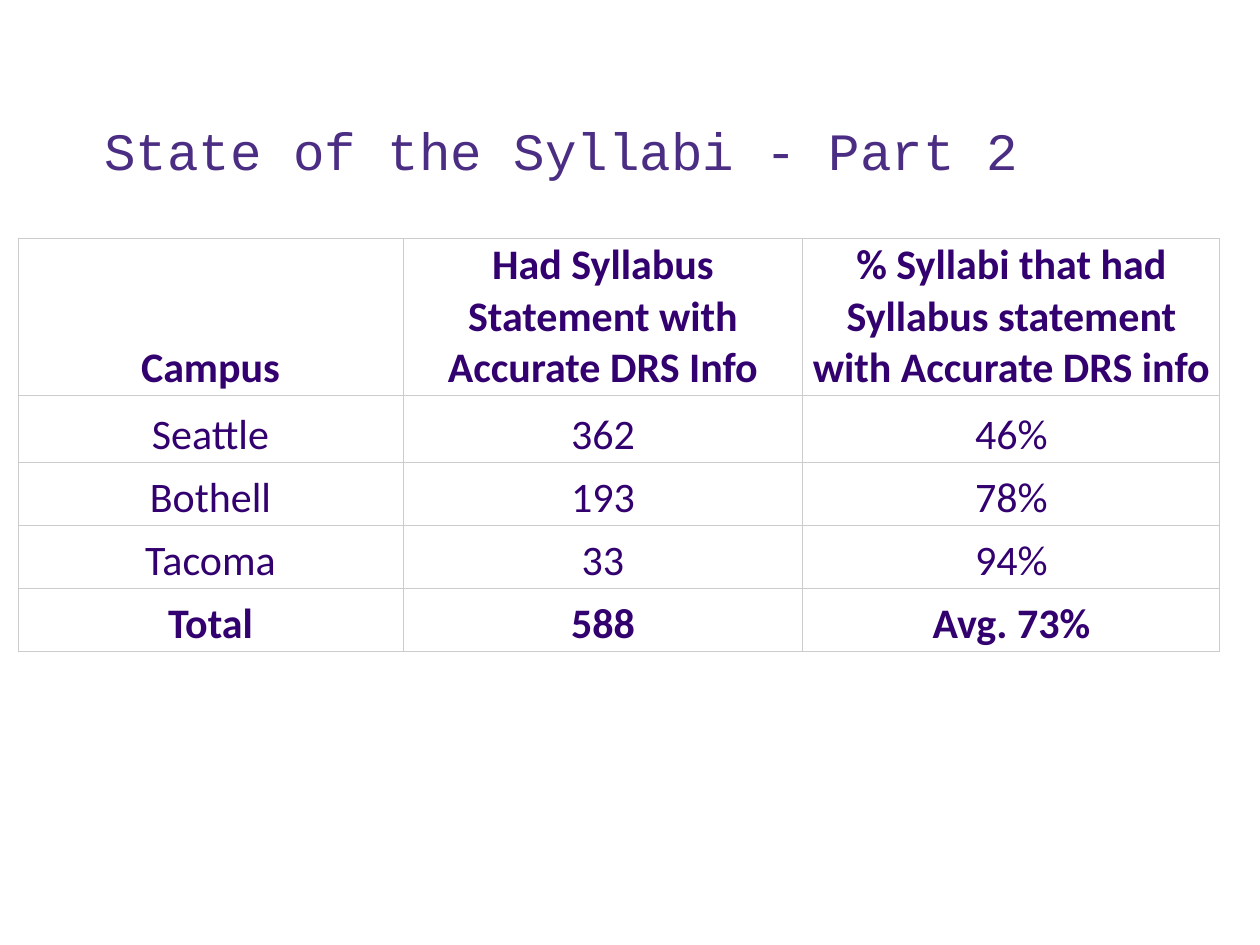
import pptx
import pptx.dml.color
import pptx.enum.text
import pptx.oxml
import pptx.oxml.ns
import pptx.util

PX = 914400 // 126
THEME = {
    "title_font": "Courier New", "title_size": 30, "title_color": "4B2E83",
    "table_font": "Calibri", "table_size": 24, "table_color": "33006F",
    "border_color": "CCCCCC", "border_width": 0.6,
}
ANCHOR_BOTTOM = pptx.enum.text.MSO_ANCHOR.BOTTOM


def add_run(paragraph, text, role, bold=False):
    run = paragraph.add_run()
    run.text = text
    run.font.name = THEME[role + "_font"]
    run.font.size = pptx.util.Pt(THEME[role + "_size"])
    run.font.color.rgb = pptx.dml.color.RGBColor.from_string(THEME[role + "_color"])
    run.font.bold = bold


def add_borders(cell):
    properties = cell._tc.get_or_add_tcPr()
    width = pptx.util.Pt(THEME["border_width"])
    for side in ("lnL", "lnR", "lnT", "lnB"):
        properties.append(pptx.oxml.parse_xml(
            f'<a:{side} {pptx.oxml.ns.nsdecls("a")} w="{width}"><a:solidFill>'
            f'<a:srgbClr val="{THEME["border_color"]}"/></a:solidFill></a:{side}>'))


presentation = pptx.Presentation()
presentation.slide_width = pptx.util.Inches(10)
presentation.slide_height = pptx.util.Inches(7.5)
slide = presentation.slides.add_slide(presentation.slide_layouts[6])

# Table
rows = [
    ("Campus", "Had Syllabus Statement with Accurate DRS Info",
     "% Syllabi that had Syllabus statement with Accurate DRS info"),
    ("Seattle", "362", "46%"),
    ("Bothell", "193", "78%"),
    ("Tacoma", "33", "94%"),
    ("Total", "588", "Avg. 73%"),
]
column_widths = [385, 400, 417]
row_heights = [152, 67, 63, 63, 63]
table = slide.shapes.add_table(
    len(rows), len(column_widths), 18 * PX, 238 * PX,
    sum(column_widths) * PX, sum(row_heights) * PX).table
table.horz_banding = False
table.first_row = False
for column, width in zip(table.columns, column_widths):
    column.width = width * PX
for row_index, (row, height, texts) in enumerate(zip(table.rows, row_heights, rows)):
    row.height = height * PX
    is_header = row_index == 0
    is_total = row_index == len(rows) - 1
    for cell, text in zip(row.cells, texts):
        add_borders(cell)
        cell.fill.background()
        cell.vertical_anchor = ANCHOR_BOTTOM
        cell.margin_left = cell.margin_right = (2 if is_header else 4) * PX
        cell.margin_top = cell.margin_bottom = 2 * PX
        paragraph = cell.text_frame.paragraphs[0]
        paragraph.alignment = pptx.enum.text.PP_ALIGN.CENTER
        add_run(paragraph, text, "table", bold=is_header or is_total)

# Title
title = slide.shapes.add_textbox(92 * PX, 52 * PX, 1128 * PX, 136 * PX)
title.text_frame.word_wrap = True
title.text_frame.vertical_anchor = ANCHOR_BOTTOM
paragraph = title.text_frame.paragraphs[0]
paragraph.line_spacing = 0.9
add_run(paragraph, "State of the Syllabi - Part 2", "title")

presentation.save("out.pptx")
